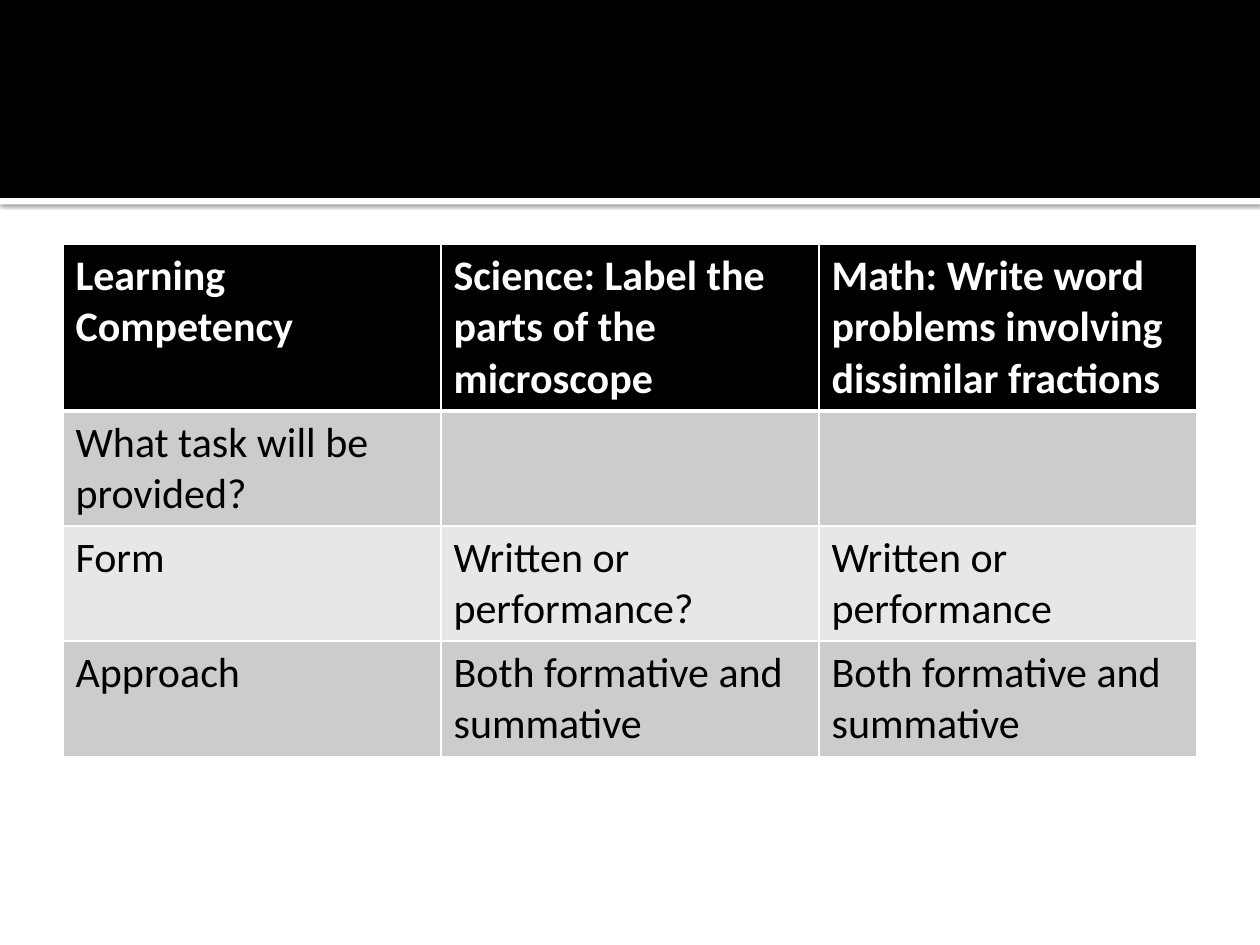
import pptx
import pptx.dml.color
import pptx.enum.shapes
import pptx.oxml
import pptx.oxml.ns
import pptx.util

Cm = pptx.util.Cm
Pt = pptx.util.Pt
RGBColor = pptx.dml.color.RGBColor

BLACK = RGBColor(0x00, 0x00, 0x00)
WHITE = RGBColor(0xFF, 0xFF, 0xFF)
DARK_BAND = RGBColor(0xCC, 0xCC, 0xCC)
LIGHT_BAND = RGBColor(0xE7, 0xE7, 0xE7)

COMPETENCIES = [
    ("Learning Competency", "Science: Label the parts of the microscope",
     "Math: Write word problems involving dissimilar fractions"),
    ("What task will be provided?", "", ""),
    ("Form", "Written or performance?", "Written or performance"),
    ("Approach", "Both formative and summative", "Both formative and summative"),
]
SLIDE_WIDTH, SLIDE_HEIGHT = Cm(25.4), Cm(19.05)
BANNER_HEIGHT, STRIPE_HEIGHT = Cm(3.99), Cm(0.13)
MARGIN, TABLE_TOP = Cm(1.27), Cm(4.93)
HEADER_HEIGHT, ROW_HEIGHT = Cm(3.33), Cm(2.32)
NAMESPACE = pptx.oxml.ns.nsdecls("a")


def add_bar(slide, top, height, color):
    bar = slide.shapes.add_shape(
        pptx.enum.shapes.MSO_SHAPE.RECTANGLE, 0, top, SLIDE_WIDTH, height)
    bar.shadow.inherit = False
    bar.fill.solid()
    bar.fill.fore_color.rgb = color
    bar.line.fill.background()
    return bar


def add_shadow(bar):
    effects = bar._element.spPr.find(pptx.oxml.ns.qn("a:effectLst"))
    effects.append(pptx.oxml.parse_xml(
        f'<a:outerShdw {NAMESPACE} blurRad="{Pt(2.5)}" dist="{Pt(0.8)}" '
        f'dir="5400000" algn="t" rotWithShape="0"><a:srgbClr val="{BLACK}">'
        '<a:alpha val="60000"/></a:srgbClr></a:outerShdw>'))


def set_borders(cell, widths):
    properties = cell._tc.get_or_add_tcPr()
    for side, width in widths.items():
        properties.append(pptx.oxml.parse_xml(
            f'<a:ln{side} {NAMESPACE} w="{Pt(width)}"><a:solidFill>'
            f'<a:srgbClr val="{WHITE}"/></a:solidFill></a:ln{side}>'))


def format_cell(cell, text, row):
    is_header = row == 0
    set_borders(cell, {"L": 1, "R": 1, "T": 3 if row == 1 else 1,
                       "B": 3 if is_header else 1})
    cell.fill.solid()
    band = DARK_BAND if row % 2 else LIGHT_BAND
    cell.fill.fore_color.rgb = BLACK if is_header else band
    cell.text = text
    font = cell.text_frame.paragraphs[0].font
    font.name = "Calibri"
    font.size = Pt(24)
    font.bold = is_header
    font.color.rgb = WHITE if is_header else BLACK


def main():
    deck = pptx.Presentation()
    deck.slide_width, deck.slide_height = SLIDE_WIDTH, SLIDE_HEIGHT
    slide = deck.slides.add_slide(deck.slide_layouts[6])
    slide.background.fill.solid()
    slide.background.fill.fore_color.rgb = WHITE

    add_shadow(add_bar(slide, BANNER_HEIGHT, STRIPE_HEIGHT, WHITE))
    add_bar(slide, 0, BANNER_HEIGHT, BLACK)

    heights = [HEADER_HEIGHT] + [ROW_HEIGHT] * (len(COMPETENCIES) - 1)
    competency_table = slide.shapes.add_table(
        len(COMPETENCIES), len(COMPETENCIES[0]), MARGIN, TABLE_TOP,
        SLIDE_WIDTH - 2 * MARGIN, sum(heights)).table
    for row, (texts, height) in enumerate(zip(COMPETENCIES, heights)):
        competency_table.rows[row].height = height
        for column, text in enumerate(texts):
            format_cell(competency_table.cell(row, column), text, row)

    deck.save("out.pptx")


if __name__ == "__main__":
    main()
